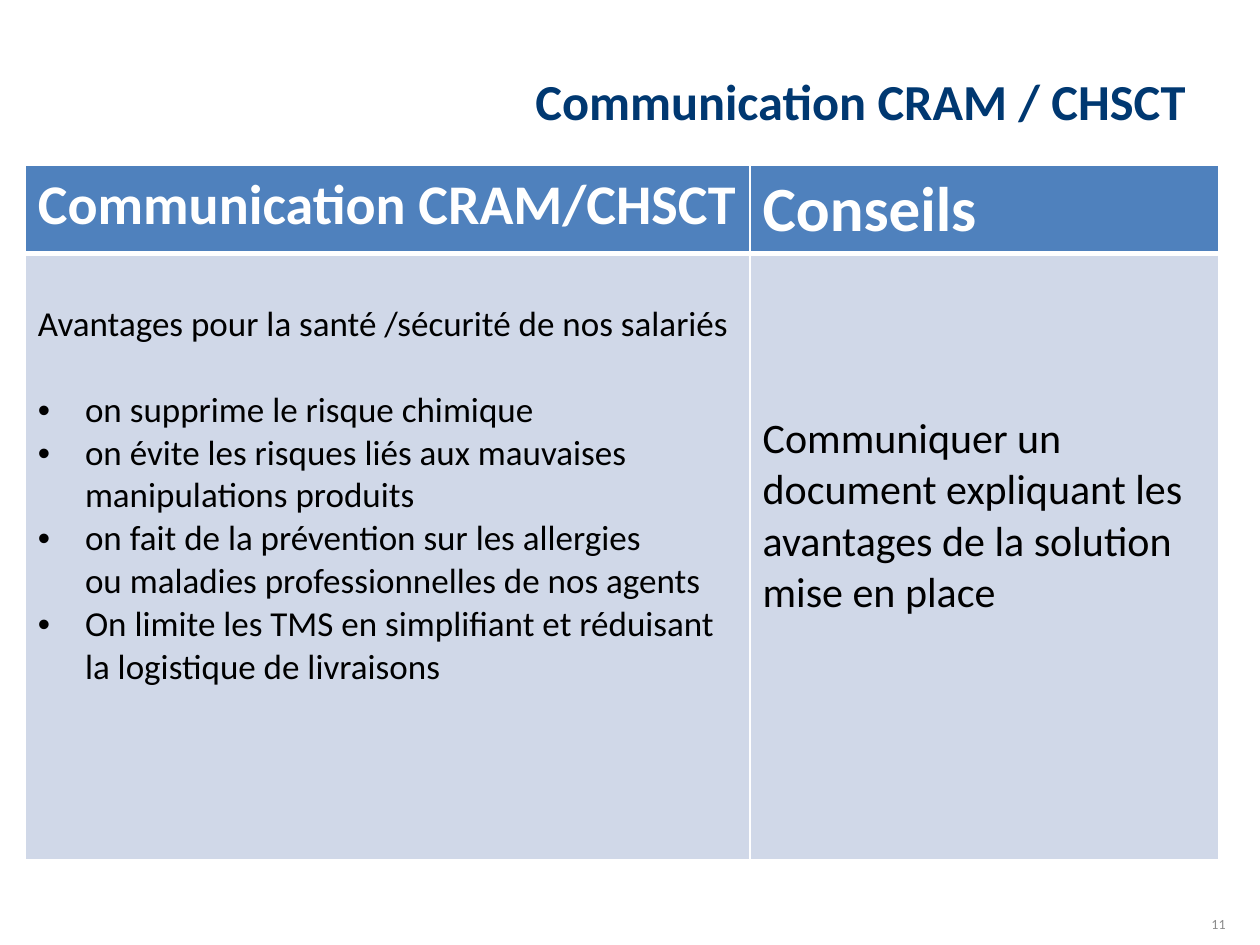
from dataclasses import dataclass

from lxml.etree import SubElement
from pptx import Presentation
from pptx.dml.color import RGBColor
from pptx.enum.text import MSO_ANCHOR as Anchor, PP_ALIGN as Align
from pptx.oxml.ns import qn
from pptx.table import _Cell as Cell
from pptx.text.text import TextFrame
from pptx.util import Cm, Length, Pt

FONT = "Calibri"
NAVY = RGBColor(0x00, 0x38, 0x71)
GREY = RGBColor(0x8C, 0x8C, 0x8C)
BLUE = RGBColor(0x4F, 0x81, 0xBD)
PALE_BLUE = RGBColor(0xD0, 0xD8, 0xE8)
WHITE = RGBColor(0xFF, 0xFF, 0xFF)
BLACK = RGBColor(0x00, 0x00, 0x00)
INDENT = Cm(0.95)


@dataclass
class Line:
    text: str
    indented: bool = False
    bullet: bool = False
    space_before: float = 0


@dataclass
class CellContent:
    lines: list[Line]
    size: float
    margin_top: Length = Cm(0.13)


HEADER = [
    CellContent([Line("Communication CRAM/CHSCT")], 32),
    CellContent([Line("Conseils")], 36),
]
BODY = [
    CellContent([
        Line("Avantages pour la santé /sécurité de nos salariés"),
        Line("on supprime le risque chimique", True, True, 24.4),
        Line("on évite les risques liés aux mauvaises manipulations produits", True, True),
        Line("on fait de la prévention sur les allergies", True, True),
        Line("ou maladies professionnelles de nos agents", True),
        Line("On limite les TMS en simplifiant et réduisant la logistique de livraisons", True, True),
    ], 20, Cm(1)),
    CellContent([
        Line("Communiquer un document expliquant les avantages de la solution mise en place"),
    ], 24, Cm(3.23)),
]


def write_text(frame: TextFrame, lines: list[Line], *, size: float, color: RGBColor,
               bold: bool = False, align: Align = Align.LEFT) -> None:
    frame.word_wrap = True
    for index, line in enumerate(lines):
        paragraph = frame.add_paragraph() if index else frame.paragraphs[0]
        paragraph.alignment = align
        if line.space_before:
            paragraph.space_before = Pt(line.space_before)
        if line.indented:
            properties = paragraph._p.get_or_add_pPr()
            properties.set("marL", str(INDENT))
            if line.bullet:
                properties.set("indent", str(-INDENT))
                SubElement(properties, qn("a:buFont"), typeface="Arial")
                SubElement(properties, qn("a:buChar"), char="•")
        run = paragraph.add_run()
        run.text = line.text
        font = run.font
        font.name, font.size, font.bold = FONT, Pt(size), bold
        font.color.rgb = color


def add_label(slide, text: str, left: Length, top: Length, width: Length, height: Length,
              *, anchor: Anchor, **text_format) -> None:
    frame = slide.shapes.add_textbox(left, top, width, height).text_frame
    frame.vertical_anchor = anchor
    write_text(frame, [Line(text)], align=Align.RIGHT, **text_format)


def set_borders(cell: Cell, *, top: float, bottom: float) -> None:
    properties = cell._tc.get_or_add_tcPr()
    for side, width in (("L", 1), ("R", 1), ("T", top), ("B", bottom)):
        border = SubElement(properties, qn(f"a:ln{side}"), w=str(Pt(width)))
        fill = SubElement(border, qn("a:solidFill"))
        SubElement(fill, qn("a:srgbClr"), val=str(WHITE))


def fill_row(cells, contents: list[CellContent], *, background: RGBColor,
             color: RGBColor, bold: bool, top: float, bottom: float) -> None:
    for cell, content in zip(cells, contents):
        set_borders(cell, top=top, bottom=bottom)
        cell.fill.solid()
        cell.fill.fore_color.rgb = background
        cell.margin_top = content.margin_top
        write_text(cell.text_frame, content.lines, size=content.size, color=color, bold=bold)


def main() -> None:
    presentation = Presentation()
    presentation.slide_width, presentation.slide_height = Cm(25.4), Cm(19.05)
    slide = presentation.slides.add_slide(presentation.slide_layouts[6])

    # Title and slide number
    add_label(slide, "Communication CRAM / CHSCT", Cm(1.3), Cm(0.36), Cm(22.86), Cm(2.39),
              anchor=Anchor.BOTTOM, size=28.8, color=NAVY, bold=True)
    add_label(slide, "11", Cm(23.06), Cm(18.34), Cm(1.9), Cm(0.51),
              anchor=Anchor.TOP, size=8, color=GREY)

    # Communication and advice table
    table = slide.shapes.add_table(2, 2, Cm(0.51), Cm(3.33), Cm(24.06), Cm(14)).table
    for column, width in zip(table.columns, (14.61, 9.45)):
        column.width = Cm(width)
    for row, height in zip(table.rows, (1.78, 12.22)):
        row.height = Cm(height)
    fill_row(table.rows[0].cells, HEADER, background=BLUE, color=WHITE,
             bold=True, top=1, bottom=3)
    fill_row(table.rows[1].cells, BODY, background=PALE_BLUE, color=BLACK,
             bold=False, top=3, bottom=1)

    presentation.save("out.pptx")


if __name__ == "__main__":
    main()
